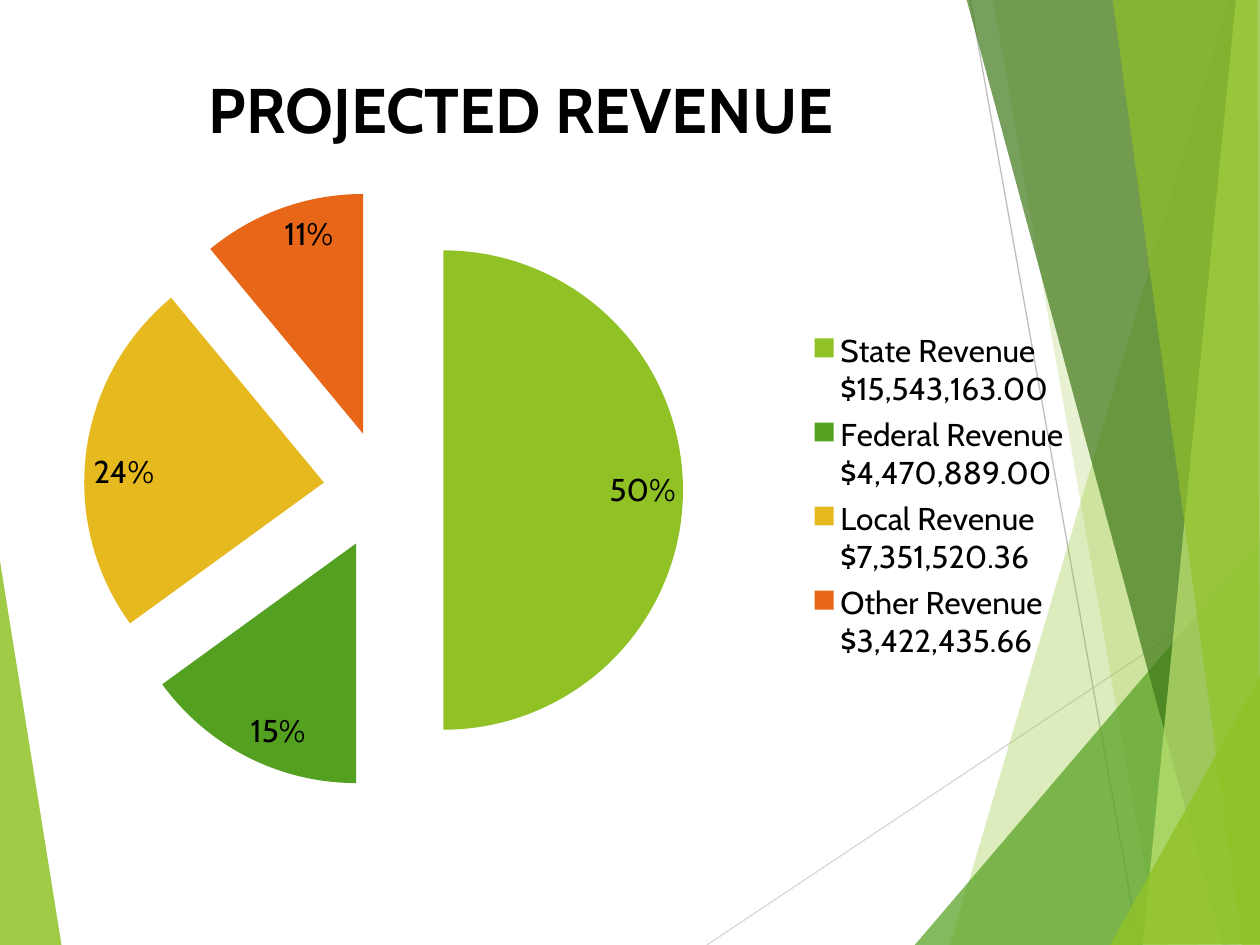
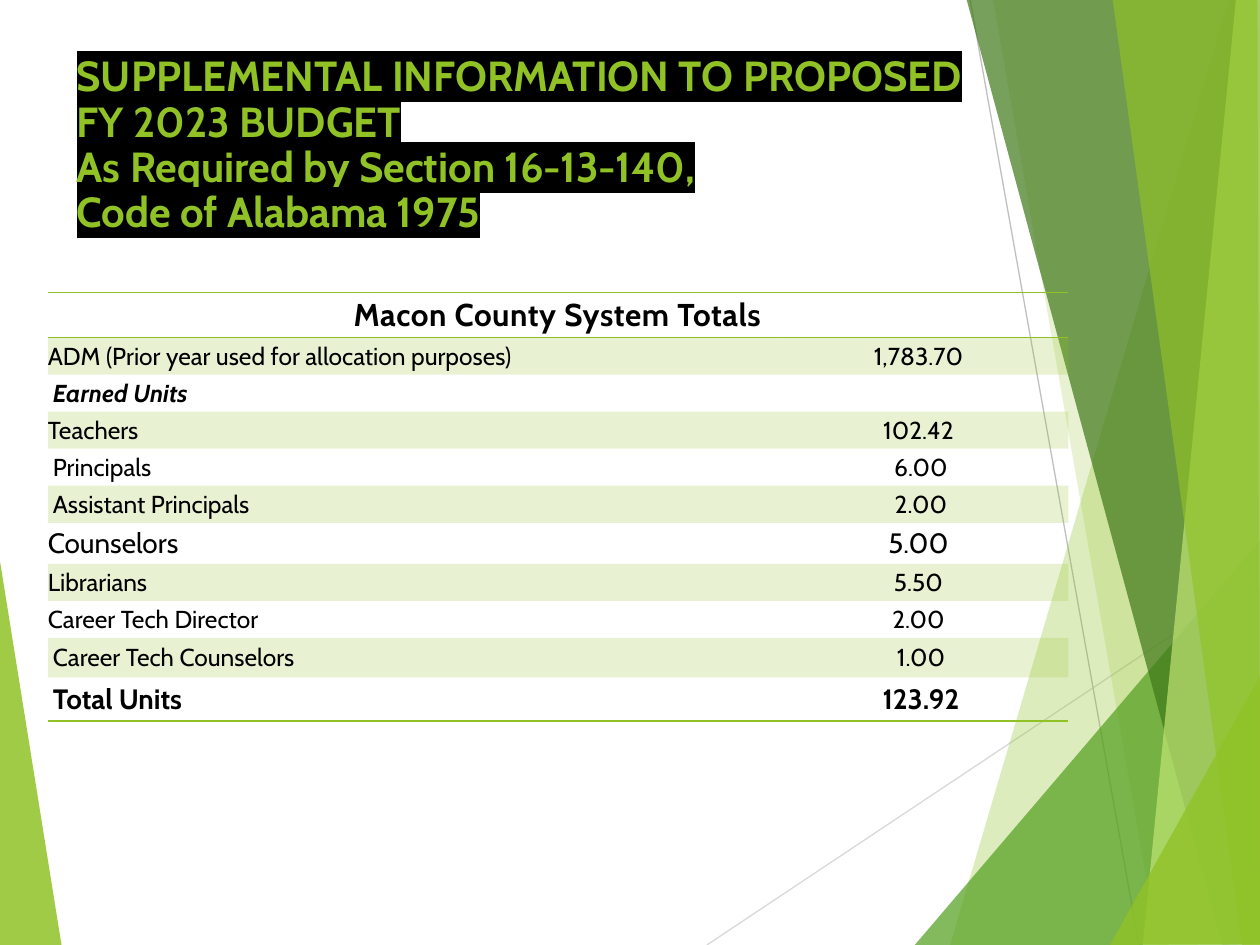
"""Build two budget slides: projected revenue and supplemental unit totals."""
from lxml import etree
from pptx import Presentation, util as u
from pptx.chart import data as cd
from pptx.dml import color
from pptx.enum import chart as ch, shapes, text
from pptx.oxml import ns

HUE = {"lime": "90C226", "green": "54A021", "dark": "3F7819", "pale": "C0E474",
       "gold": "E6B91E", "rust": "E76618", "black": "000000",
       "light": "D9D9D9", "gray": "BFBFBF"}
RGB = {k: color.RGBColor.from_string(v) for k, v in HUE.items()}
FACE = "Cabin"
IN = u.Inches


def fade(node, pct):
    tint = node.find(".//" + ns.qn("a:srgbClr"))
    etree.SubElement(tint, ns.qn("a:alpha"), val=str(pct * 1000))


def style(para, size, hue="black", bold=False, slant=False):
    for run in para.runs:
        font = run.font
        font.name, font.size, font.bold, font.italic = FACE, u.Pt(size), bold, slant
        font.color.rgb = RGB[hue]


prs = Presentation()
prs.slide_width, prs.slide_height = IN(10), IN(7.5)

wedge = ("lime", 85, [(-0.01, 4.39), (0.49, 7.51), (-0.01, 7.5)])
rays = [("light", (5.61, 7.5), (10.01, 4.57)), ("gray", (7.7, 0), (9.04, 7.5))]
bands = [
    ("lime", 30, [(9.75, 0), (7.54, 7.5), (10.02, 7.51), (10.01, 0.01)]),
    ("lime", 20, [(7.88, -0.01), (9.19, 7.5), (10.01, 7.5), (10.01, -0.01)]),
    ("green", 72, [(7.26, 7.5), (10, 4.29), (10.01, 7.5)]),
    ("dark", 70, [(7.67, -0.01), (9.7, 7.5), (10.01, 7.49), (10.01, -0.01)]),
    ("pale", 70, [(9.81, -0.01), (9.07, 7.5), (10.01, 7.5), (10, -0.01)]),
    ("lime", 65, [(8.83, -0.01), (9.86, 7.5), (10, 7.5), (9.98, -0.01)]),
    ("lime", 80, [(8.81, 7.5), (10.01, 5.35), (10.01, 7.49)]),
]
heads = [
    ("PROJECTED REVENUE", (0.72, 0.51, 6.83, 1.25), 36, "black",
     text.PP_ALIGN.CENTER, text.MSO_ANCHOR.TOP),
    ("SUPPLEMENTAL INFORMATION TO PROPOSED FY 2023 BUDGET\v"
     "As Required by Section 16-13-140,\vCode of Alabama 1975",
     (0.51, 0.7, 7.54, 1.23), 24, "lime",
     text.PP_ALIGN.LEFT, text.MSO_ANCHOR.BOTTOM),
]

pages = []
for words, spot, size, hue, side, hold in heads:
    page = prs.slides.add_slide(prs.slide_layouts[6])
    pages.append(page)
    for tone, pct, pts in [wedge] + bands:
        pts = [(IN(x), IN(y)) for x, y in pts]
        pen = page.shapes.build_freeform(*pts[0], scale=1.0)
        pen.add_line_segments(pts[1:], close=True)
        band = pen.convert_to_shape()
        band.shadow.inherit = False
        band.fill.solid()
        band.fill.fore_color.rgb = RGB[tone]
        band.line.fill.background()
        fade(band._element.spPr, pct)
        if pts[0][0] < 0:
            for tone, start, end in rays:
                ray = page.shapes.add_connector(
                    shapes.MSO_CONNECTOR.STRAIGHT, *map(IN, start + end))
                ray.line.color.rgb = RGB[tone]
                ray.line.width = u.Pt(0.75)
                etree.SubElement(ray._element.spPr, ns.qn("a:effectLst"))
    frame = page.shapes.add_textbox(*map(IN, spot)).text_frame
    frame.word_wrap = True
    frame.vertical_anchor = hold
    para = frame.paragraphs[0]
    para.text = words
    para.alignment = side
    style(para, size, hue, bold=True)

para.line_spacing = 0.9
for run in para.runs:
    mark = etree.Element(ns.qn("a:highlight"))
    etree.SubElement(mark, ns.qn("a:srgbClr"), val=HUE["black"])
    run._r.get_or_add_rPr().find(ns.qn("a:solidFill")).addnext(mark)

funds = [("State Revenue $15,543,163.00", 50, "lime"),
         ("Federal Revenue $4,470,889.00", 15, "green"),
         ("Local Revenue $7,351,520.36", 24, "gold"),
         ("Other Revenue $3,422,435.66", 11, "rust")]
data = cd.CategoryChartData()
data.categories = [name for name, share, hue in funds]
data.add_series("Series 1", [share for name, share, hue in funds])
pie = pages[0].shapes.add_chart(ch.XL_CHART_TYPE.PIE, IN(-0.22), IN(1.36),
                                IN(8.82), IN(5.06), data).chart
pie.font.name, pie.font.size = FACE, u.Pt(18)
pie.font.color.rgb = RGB["black"]
pie.has_title = False
pie.has_legend = True
pie.legend.position = ch.XL_LEGEND_POSITION.RIGHT
pie.legend.include_in_layout = False
plot = pie.plots[0]
plot.vary_by_categories = True
plot.has_data_labels = True
tags = plot.data_labels
tags.show_percentage, tags.show_value = True, False
tags.number_format, tags.number_format_is_linked = "0%", False
tags.position = ch.XL_LABEL_POSITION.INSIDE_END
series = plot.series[0]
for i, (name, share, hue) in enumerate(funds):
    fill = series.points[i].format.fill
    fill.solid()
    fill.fore_color.rgb = RGB[hue]
burst = etree.Element(ns.qn("c:explosion"), val="25")
series._element.find(ns.qn("c:dPt")).addprevious(burst)

area = pie._chartSpace.chart.plotArea
key = pie.legend._element
for node, box in [(area, (0.1, 0.03, 0.54, 0.94)), (key, (0.75, 0.24, 0.24, 0.54))]:
    for old in node.findall(ns.qn("c:layout")):
        node.remove(old)
    lay = etree.Element(ns.qn("c:layout"))
    man = etree.SubElement(lay, ns.qn("c:manualLayout"))
    if node is area:
        etree.SubElement(man, ns.qn("c:layoutTarget"), val="inner")
    for tag in ("xMode", "yMode"):
        etree.SubElement(man, ns.qn("c:" + tag), val="edge")
    for tag, val in zip("xywh", box):
        etree.SubElement(man, ns.qn("c:" + tag), val=str(val))
    node.insert(0 if node is area else 1, lay)

rows = [("Macon County System Totals", "", 0, 18),
        ("ADM (Prior year used for allocation purposes)", "1,783.70", 0, 14),
        ("Earned Units", "", 0.04, 14),
        ("Teachers", "102.42", 0, 14),
        ("Principals", "6.00", 0.04, 14),
        ("Assistant Principals", "2.00", 0.04, 14),
        ("Counselors", "5.00", 0, 16),
        ("Librarians", "5.50", 0, 14),
        ("Career Tech Director", "2.00", 0, 14),
        ("Career Tech Counselors", "1.00", 0.04, 14),
        ("Total Units", "123.92", 0.04, 16)]
last = len(rows) - 1
grid = pages[1].shapes.add_table(len(rows), 2, IN(0.38), IN(2.32),
                                 IN(8.1), IN(3.47)).table
grid.first_row = grid.horz_banding = False
look = grid._tbl.tblPr.find(ns.qn("a:tableStyleId"))
look.text = "{2D5ABB26-0587-4C30-8999-92F81FD0307C}"
grid.columns[0].width, grid.columns[1].width = IN(5.79), IN(2.31)
for r, (name, count, inset, size) in enumerate(rows):
    grid.rows[r].height = IN({0: 0.36, 6: 0.3}.get(r, 0.27))
    pad = 0.04 if r > 8 else 0.03
    for c, words in enumerate((name, count)):
        cell = grid.cell(r, c)
        cell.margin_left, cell.margin_right = IN(inset), IN(0.07 if r else 0.01)
        cell.margin_top = cell.margin_bottom = IN(pad)
        para = cell.text_frame.paragraphs[0]
        para.text = words
        para.alignment = (text.PP_ALIGN.CENTER if c or r == 0
                          else text.PP_ALIGN.LEFT)
        style(para, size, bold=r in (0, 2, last), slant=r == 2)
        if not words:
            etree.SubElement(para._p, ns.qn("a:endParaRPr"), sz=str(size * 100))
        props = cell._tc.get_or_add_tcPr()
        if r % 2:
            cell.fill.solid()
            cell.fill.fore_color.rgb = RGB["lime"]
            fade(props, 20)
        else:
            cell.fill.background()
        for edge in {0: ("lnB", "lnT"), last: ("lnB",)}.get(r, ()):
            rule = etree.Element(ns.qn("a:" + edge), w=str(u.Pt(1)))
            ink = etree.SubElement(rule, ns.qn("a:solidFill"))
            etree.SubElement(ink, ns.qn("a:srgbClr"), val=HUE["lime"])
            props.insert(0, rule)
top = grid.cell(0, 0)
top.merge(grid.cell(0, 1))
top.vertical_anchor = text.MSO_ANCHOR.MIDDLE
for run in top.text_frame.paragraphs[0].runs:
    run._r.get_or_add_rPr().set("spc", "30")

prs.save("out.pptx")
